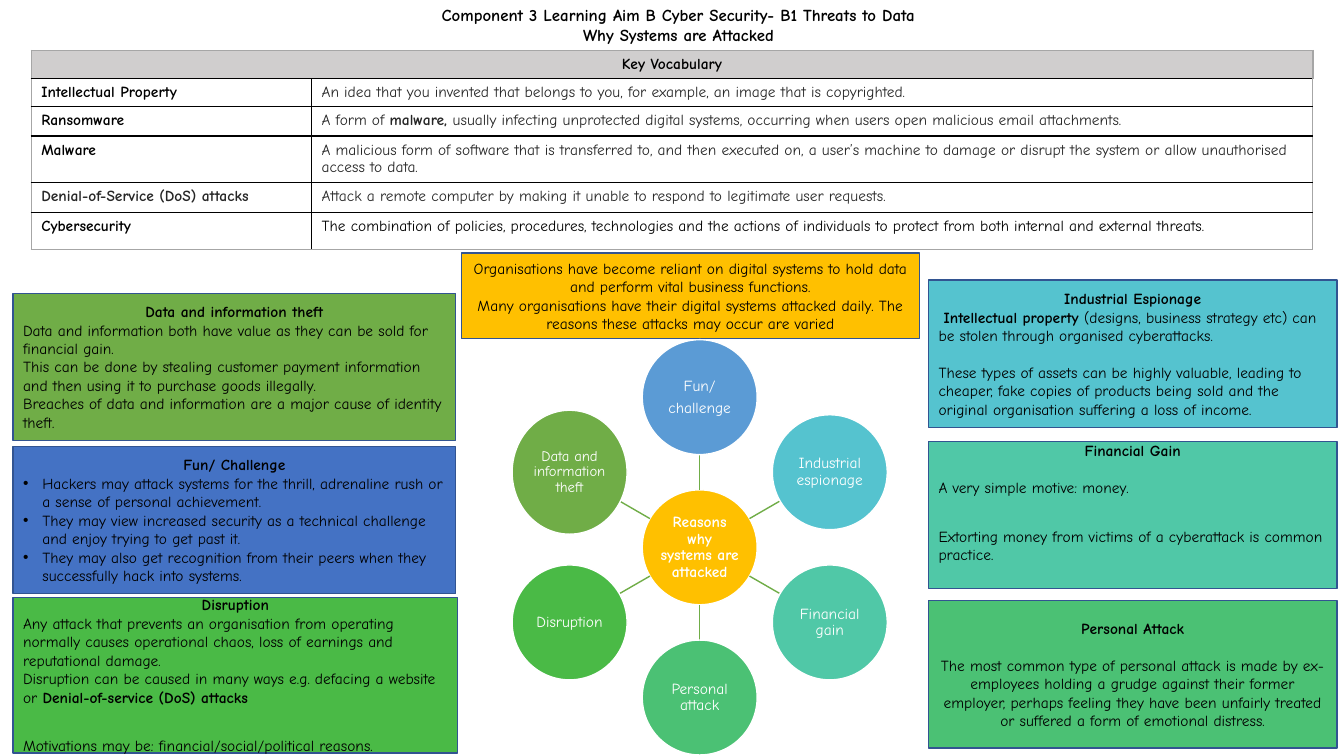
from dataclasses import dataclass
from math import cos, radians, sin

from lxml import etree
from pptx import Presentation
from pptx import util as u
from pptx.dml.color import RGBColor
from pptx.enum import shapes, text
from pptx.oxml.ns import qn

LEFT, CENTRE = text.PP_ALIGN.LEFT, text.PP_ALIGN.CENTER
MIDDLE, TOP = text.MSO_ANCHOR.MIDDLE, text.MSO_ANCHOR.TOP


@dataclass(frozen=True)
class Theme:
    font: str = "Comic Neue"
    title_size: float = 12
    body_size: float = 11
    small_size: float = 10.5
    ink: str = "000000"
    soft_ink: str = "262626"
    paper: str = "FFFFFF"
    header: str = "D0CECE"
    table_edge: str = "A6A6A6"
    card_edge: str = "325491"
    gold: str = "FFC000"
    blue: str = "5B9BD5"
    deep_blue: str = "4472C4"
    cyan: str = "55C3CF"
    teal: str = "50C8A7"
    mint: str = "4BC174"
    green: str = "4ABA46"
    olive: str = "70AD47"


@dataclass(frozen=True)
class Para:
    """A paragraph; **double stars** enclose bold words, gap is in points."""
    words: str
    align: int = LEFT
    gap: float = 0
    bullet: bool = False


def rgb(colour):
    return RGBColor.from_string(colour)


class SlideBuilder:
    def __init__(self, slide, theme):
        self.slide, self.theme = slide, theme

    def set_text(self, frame, paras, colour, size, spacing=1.0, after=0):
        for index, para in enumerate(paras):
            line = frame.add_paragraph() if index else frame.paragraphs[0]
            line.alignment, line.line_spacing = para.align, spacing
            line.space_before, line.space_after = u.Pt(para.gap), u.Pt(after)
            line.font.name, line.font.size = self.theme.font, u.Pt(size)
            line.font.color.rgb = rgb(colour)
            for part, words in enumerate(para.words.split("**")):
                if words:
                    run = line.add_run()
                    run.text, run.font.bold = words, part % 2 == 1
            self.set_bullet(line, para.bullet)

    def set_bullet(self, line, shown):
        props = line._p.get_or_add_pPr()
        indent = u.Inches(0.19) if shown else 0
        props.set("marL", str(indent))
        props.set("indent", str(-indent))
        mark = etree.Element(qn("a:buChar" if shown else "a:buNone"))
        if shown:
            mark.set("char", "•")
        props.find(qn("a:defRPr")).addprevious(mark)

    def place(self, shape, box):
        shape.left, shape.top, shape.width, shape.height = map(u.Inches, box)

    def paint(self, shape, fill, edge):
        shape.fill.solid()
        shape.fill.fore_color.rgb = rgb(fill)
        shape.line.color.rgb = rgb(edge)
        shape.line.width = u.Pt(1)

    def set_frame(self, shape, anchor=MIDDLE):
        frame = shape.text_frame
        frame.word_wrap, frame.auto_size = True, text.MSO_AUTO_SIZE.NONE
        frame.vertical_anchor = anchor
        return frame

    def title(self, box, lines):
        heading = self.slide.shapes.title
        self.place(heading, box)
        self.set_text(self.set_frame(heading), [Para(f"**{line}**", CENTRE) for line in lines],
                      self.theme.ink, self.theme.title_size)

    def card(self, box, fill, paras, heading=None, holder=None, anchor=MIDDLE):
        """A filled box of text, drawn in the given placeholder if there is one."""
        if holder is None:
            holder = self.slide.shapes.add_shape(shapes.MSO_SHAPE.RECTANGLE, 0, 0, 0, 0)
            holder.shadow.inherit = False
        self.place(holder, box)
        self.paint(holder, fill, self.theme.card_edge)
        frame = self.set_frame(holder, anchor)
        if anchor == TOP:
            frame.margin_top = 0
        if heading:
            paras = [Para(f"**{heading}**", CENTRE), *paras]
        self.set_text(frame, paras, self.theme.ink, self.theme.body_size)

    def circle(self, x, y, fill, lines, height=1.14, size=None):
        width = 1.14
        disc = self.slide.shapes.add_shape(shapes.MSO_SHAPE.OVAL, 0, 0, 0, 0)
        self.place(disc, (x - width / 2, y - height / 2, width, height))
        disc.shadow.inherit = False
        self.paint(disc, fill, self.theme.paper)
        frame = self.set_frame(disc)
        frame.margin_left = frame.margin_right = u.Inches(0.01)
        frame.margin_top = frame.margin_bottom = u.Inches(0.01)
        self.set_text(frame, [Para(line, CENTRE) for line in lines], self.theme.paper,
                      size or self.theme.body_size, spacing=0.9, after=4)

    def spoke(self, start, end):
        line = self.slide.shapes.add_connector(
            shapes.MSO_CONNECTOR.STRAIGHT, *map(u.Inches, (*start, *end)))
        line.line.color.rgb = rgb(self.theme.olive)
        line.line.width = u.Pt(1)
        etree.SubElement(line._element.spPr, qn("a:effectLst"))

    def border(self, cell, side, colour, width=1):
        edge = etree.SubElement(cell._tc.get_or_add_tcPr(), qn(f"a:ln{side}"), w=str(u.Pt(width)))
        fill = etree.SubElement(edge, qn("a:solidFill"))
        etree.SubElement(fill, qn("a:srgbClr"), val=colour)

    def vocabulary(self, box, widths, heights, heading, entries):
        """Entries are (term, meaning, term colour, meaning colour)."""
        theme = self.theme
        table = self.slide.shapes.add_table(len(heights), 2, *map(u.Inches, box)).table
        table.first_row = table.horz_banding = False
        for column, width in zip(table.columns, widths):
            column.width = u.Inches(width)
        for row, height in zip(table.rows, heights):
            row.height = u.Inches(height)
        table.cell(0, 0).merge(table.cell(0, 1))
        last = len(heights) - 1
        for r in range(len(heights)):
            for c in range(2):
                cell = table.cell(r, c)
                self.border(cell, "L", theme.ink if c and r else theme.table_edge, 1.5 if c else 1)
                self.border(cell, "R", theme.table_edge if c or not r else theme.ink, 1 if c else 1.5)
                self.border(cell, "T", theme.ink if r else theme.table_edge)
                self.border(cell, "B", theme.table_edge if r == last else theme.ink)
                cell.fill.solid()
                cell.fill.fore_color.rgb = rgb(theme.paper if r else theme.header)
        self.set_text(table.cell(0, 0).text_frame, [Para(f"**{heading}**", CENTRE)],
                      theme.ink, theme.body_size)
        for r, (term, meaning, term_ink, meaning_ink) in enumerate(entries, 1):
            for c, words, ink in ((0, f"**{term}**", term_ink), (1, meaning, meaning_ink)):
                self.set_text(table.cell(r, c).text_frame, [Para(words)], ink, theme.body_size)

    def wheel(self, x, y, hub, reasons):
        """Circles around a hub, clockwise from the top."""
        self.circle(x, y, self.theme.gold, [hub])
        for index, (fill, lines, options) in enumerate(reasons):
            angle = radians(360 / len(reasons) * index - 90)
            inner, outer, centre = ((x + d * cos(angle), y + d * sin(angle))
                                    for d in (0.57, 0.92, 1.49))
            self.spoke(inner, outer)
            self.circle(*centre, fill, lines, **options)


def main():
    deck = Presentation()
    deck.slide_width, deck.slide_height = u.Inches(13.33), u.Inches(7.5)
    slide = deck.slides.add_slide(deck.slide_layouts[1])
    theme = Theme()
    page = SlideBuilder(slide, theme)
    ink, soft = theme.ink, theme.soft_ink

    page.title((0.13, 0, 13.2, 0.5),
               ["Component 3 Learning Aim B Cyber Security- B1 Threats to Data", "Why Systems are Attacked"])
    page.vocabulary((0.31, 0.5, 12.71, 2), (2.78, 9.93), (0.28, 0.28, 0.29, 0.46, 0.3, 0.37), "Key Vocabulary", [
        ("Intellectual Property", "An idea that you invented that belongs to you, for example, an image that is copyrighted.", ink, soft),
        ("Ransomware", "A form of **malware, **usually infecting unprotected digital systems, occurring when users open malicious email attachments.", ink, soft),
        ("Malware", "A malicious form of software that is transferred to, and then executed on, a user’s machine to damage or disrupt the system or allow unauthorised access to data.", ink, soft),
        ("Denial-of-Service (DoS) attacks", "Attack a remote computer by making it unable to respond to legitimate user requests.", soft, soft),
        ("Cybersecurity", "The combination of policies, procedures, technologies and the actions of individuals to protect from both internal and external threats.", ink, ink)])
    page.card((4.58, 2.51, 4.54, 0.85), theme.gold, [
        Para("Organisations have become reliant on digital systems to hold data and perform vital business functions.", CENTRE),
        Para("Many organisations have their digital systems attacked daily. The reasons these attacks may occur are varied", CENTRE)])
    page.wheel(6.94, 5.43, "**Reasons why systems are attacked**", [
        (theme.blue, ["Fun/", "challenge"], {}),
        (theme.cyan, ["Industrial espionage"], {}),
        (theme.teal, ["Financial gain"], {}),
        (theme.mint, ["Personal attack"], {}),
        (theme.green, ["Disruption"], {}),
        (theme.olive, ["Data and information theft"], {"height": 1.23, "size": theme.small_size})])

    page.card((0.13, 2.91, 4.39, 1.46), theme.olive, [
        Para("Data and information both have value as they can be sold for financial gain."),
        Para("This can be done by stealing customer payment information and then using it to purchase goods illegally."),
        Para("Breaches of data and information are a major cause of identity theft.")], "Data and information theft")
    page.card((0.13, 4.43, 4.39, 1.46), theme.deep_blue, [Para(words, bullet=True) for words in (
        "Hackers may attack systems for the thrill, adrenaline rush or a sense of personal achievement.",
        "They may view increased security as a technical challenge and enjoy trying to get past it.",
        "They may also get recognition from their peers when they successfully hack into systems.")],
        "Fun/ Challenge", holder=slide.placeholders[1])
    page.card((0.13, 5.93, 4.41, 1.54), theme.green, [
        Para("Any attack that prevents an organisation from operating normally causes operational chaos, loss of earnings and reputational damage."),
        Para("Disruption can be caused in many ways e.g. defacing a website or **Denial-of-service (DoS) attacks**"),
        Para("Motivations may be: financial/social/political reasons.", gap=21.5)], "Disruption")
    page.card((9.21, 2.78, 4.05, 1.46), theme.cyan, [
        Para(" **Intellectual property** (designs, business strategy etc) can be stolen through organised cyberattacks."),
        Para("These types of assets can be highly valuable, leading to cheaper, fake copies of products being sold and the original organisation suffering a loss of income.", gap=13)], "Industrial Espionage")
    page.card((9.21, 4.38, 4.05, 1.46), theme.teal, [
        Para("A very simple motive: money.", gap=13),
        Para("Extorting money from victims of a cyberattack is common practice.", gap=21.5)], "Financial Gain", anchor=TOP)
    page.card((9.21, 5.96, 4.05, 1.46), theme.mint, [
        Para("The most common type of personal attack is made by ex-employees holding a grudge against their former employer, perhaps feeling they have been unfairly treated or suffered a form of emotional distress.", CENTRE, gap=13)], "Personal Attack")
    deck.save("out.pptx")


if __name__ == "__main__":
    main()
